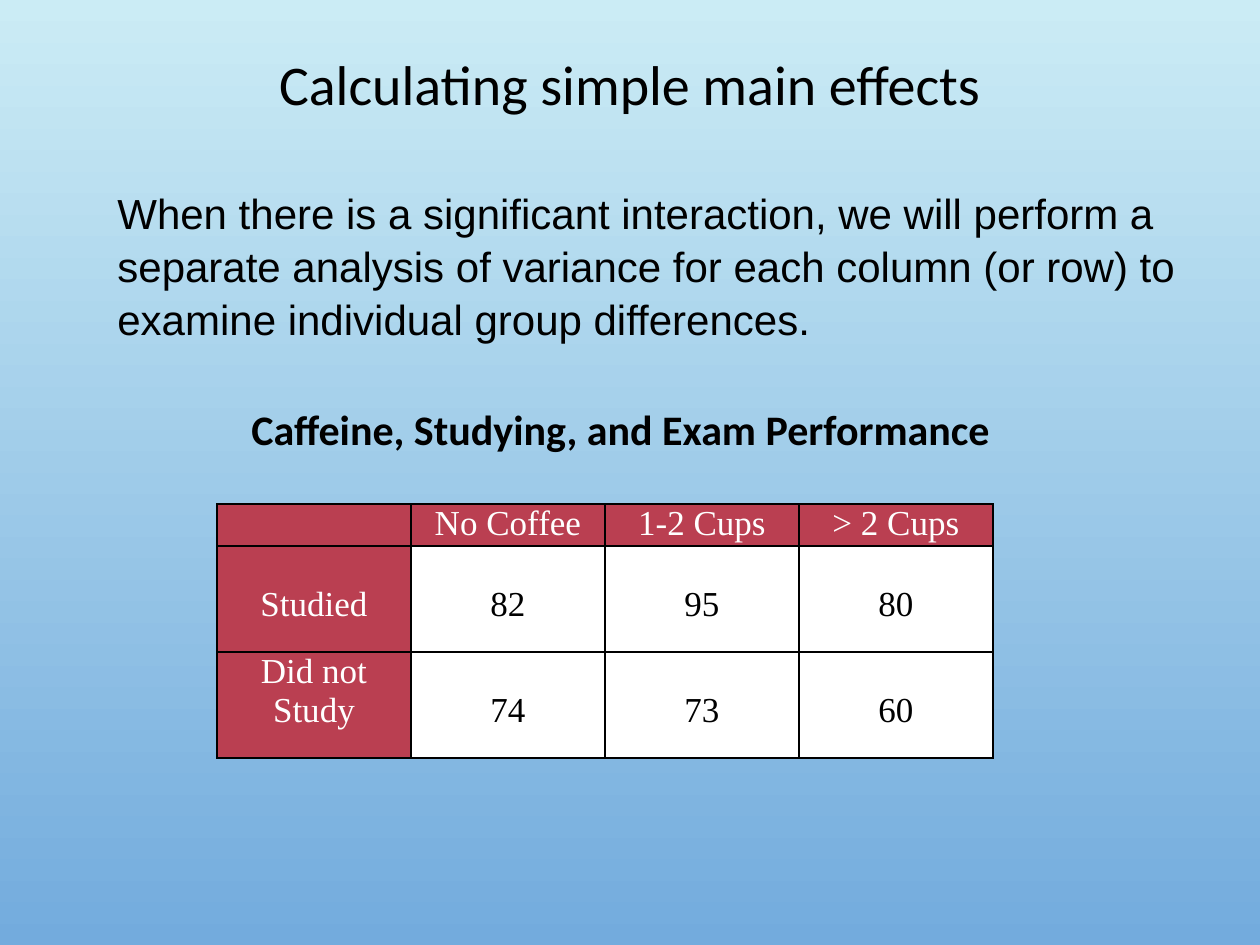
from dataclasses import dataclass

from lxml import etree
from pptx import Presentation
from pptx.dml.color import RGBColor
from pptx.enum.text import MSO_ANCHOR, PP_ALIGN
from pptx.oxml.ns import qn
from pptx.util import Pt

LEFT, MID = PP_ALIGN.LEFT, PP_ALIGN.CENTER
TOP, CENTRE = MSO_ANCHOR.TOP, MSO_ANCHOR.MIDDLE
SCALE = 914400 / 126
TITLE_ONLY = 5


@dataclass(frozen=True)
class Theme:
    """Colours, fonts and type sizes of the slide."""
    sky: str = "CBECF5"
    sea: str = "73ABDD"
    red: str = "BA3F51"
    white: str = "FFFFFF"
    black: str = "000000"
    head: str = "Calibri"
    text: str = "Arial"
    grid: str = "Times New Roman"
    big: int = 32
    mid: int = 24
    small: int = 20


THEME = Theme()
ROWS = [
    ["", "No Coffee", "1-2 Cups", "> 2 Cups"],
    ["Studied", "82", "95", "80"],
    ["Did not Study", "74", "73", "60"],
]


def px(size):
    """Turn pixels into EMU."""
    return round(size * SCALE)


def rgb(code):
    """Turn a hex code into a colour."""
    return RGBColor.from_string(code)


def apply(item, form):
    """Set attributes of an item from a dict."""
    for name, value in form.items():
        setattr(item, name, value)


def place(shape, left, top, width, height):
    """Move and size a shape."""
    apply(shape, {"left": px(left), "top": px(top),
                  "width": px(width), "height": px(height)})


def write(frame, text, name, size, tint=THEME.black, bold=False,
          align=LEFT, space=1.0):
    """Write one formatted paragraph in a text frame."""
    frame.text = text
    para = frame.paragraphs[0]
    apply(para, {"alignment": align, "line_spacing": space})
    apply(para.font, {"name": name, "size": Pt(size), "bold": bold})
    para.font.color.rgb = rgb(tint)


def paint(slide):
    """Fill the background from sky down to sea."""
    fill = slide.background.fill
    fill.gradient()
    fill.gradient_angle = 270
    for stop, tint in zip(fill.gradient_stops, (THEME.sky, THEME.sea)):
        stop.color.rgb = rgb(tint)


def add_title(slide, text):
    """Fill the title placeholder."""
    title = slide.shapes.title
    place(title, 63, 38, 1134, 98)
    title.text_frame.vertical_anchor = CENTRE
    write(title.text_frame, text, THEME.head, THEME.big, align=MID, space=0.9)


def add_text(slide, box, text, **form):
    """Add a wrapped text box."""
    frame = slide.shapes.add_textbox(*map(px, box)).text_frame
    frame.word_wrap = True
    write(frame, text, size=THEME.mid, **form)


def rule(cell):
    """Draw thin black borders round a cell."""
    props = cell._tc.get_or_add_tcPr()
    for spot, side in enumerate(("lnL", "lnR", "lnT", "lnB")):
        line = etree.Element(qn("a:" + side), w=str(Pt(1)))
        fill = etree.SubElement(line, qn("a:solidFill"))
        etree.SubElement(fill, qn("a:srgbClr"), val=THEME.black)
        props.insert(spot, line)


def style(cell, text, label, drop):
    """Fill one table cell, its text lowered by drop."""
    apply(cell, {"margin_left": px(9), "margin_right": px(9),
                 "margin_top": px(drop), "margin_bottom": 0,
                 "vertical_anchor": TOP})
    cell.fill.solid()
    cell.fill.fore_color.rgb = rgb(THEME.red if label else THEME.white)
    write(cell.text_frame, text, THEME.grid, THEME.small,
          THEME.white if label else THEME.black, align=MID)
    rule(cell)


def add_grid(slide, rows):
    """Add the table of exam scores."""
    count = len(rows[0])
    table = slide.shapes.add_table(
        len(rows), count, px(217), px(504), px(194 * count), px(254)).table
    apply(table, {"first_row": False, "horz_banding": False})
    for col in table.columns:
        col.width = px(194)
    for i, row in enumerate(rows):
        table.rows[i].height = px(106 if i else 42)
        for j, text in enumerate(row):
            drop = 39 if i and text != "Did not Study" else 0
            style(table.cell(i, j), text, i == 0 or j == 0, drop)


def main():
    """Build and save the slide."""
    deck = Presentation()
    apply(deck, {"slide_width": px(1260), "slide_height": px(945)})
    slide = deck.slides.add_slide(deck.slide_layouts[TITLE_ONLY])
    paint(slide)
    add_title(slide, "Calculating simple main effects")
    add_grid(slide, ROWS)
    add_text(slide, (239, 397, 782, 63),
             "Caffeine, Studying, and Exam Performance",
             name=THEME.head, bold=True)
    add_text(slide, (105, 179, 1102, 208),
             "When there is a significant interaction, we will perform a "
             "separate analysis of variance for each column (or row) to "
             "examine individual group differences.",
             name=THEME.text, space=1.05)
    deck.save("out.pptx")


if __name__ == "__main__":
    main()
